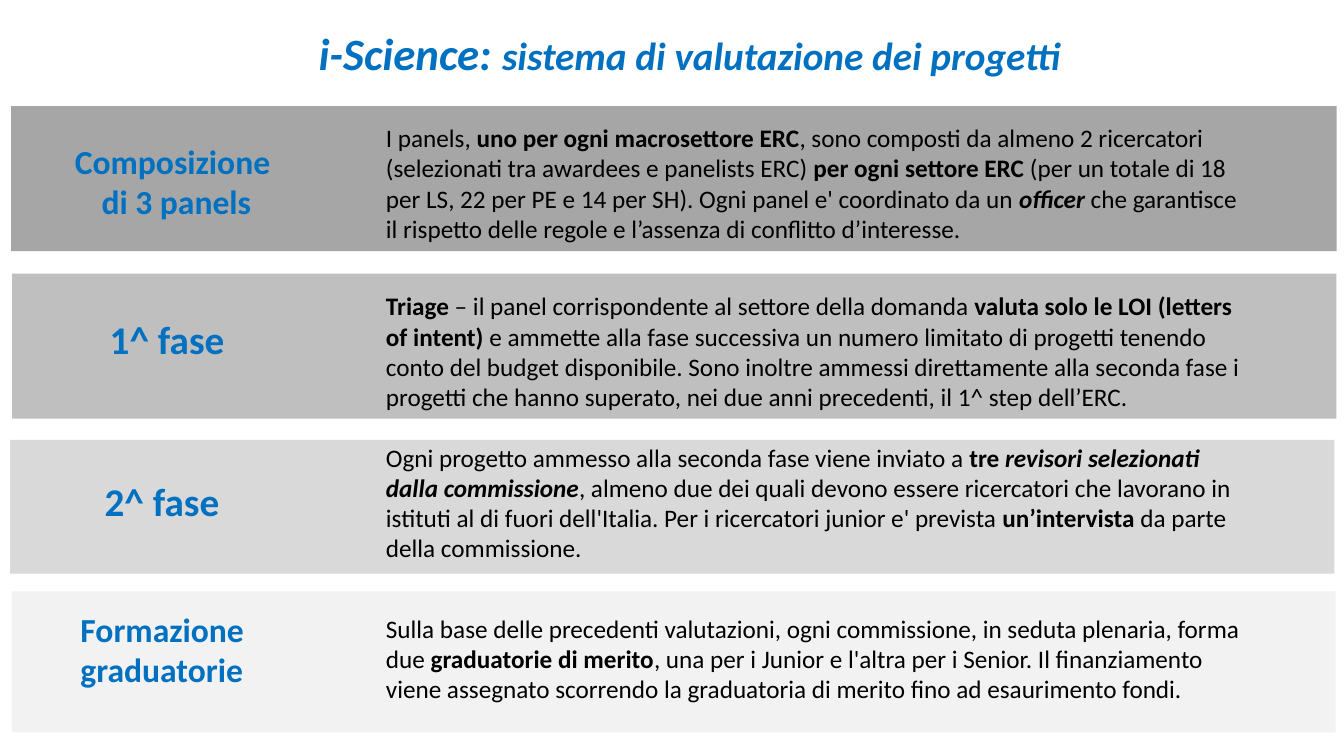
"""Build the slide on the i-Science project evaluation system."""
from pptx import Presentation
from pptx.dml.color import RGBColor
from pptx.enum.shapes import MSO_SHAPE
from pptx.enum.text import MSO_ANCHOR, MSO_AUTO_SIZE, PP_ALIGN
from pptx.util import Pt

RECTANGLE = MSO_SHAPE.RECTANGLE
TOP = MSO_ANCHOR.TOP
NO_AUTOFIT = MSO_AUTO_SIZE.NONE
LEFT, CENTER = PP_ALIGN.LEFT, PP_ALIGN.CENTER
TITLE_ONLY = 5
FONT = "Calibri"
COLORS = {
    "accent": "0070C0",
    "text": "000000",
    "panels": "A6A6A6",
    "phase_1": "BFBFBF",
    "phase_2": "D9D9D9",
    "ranking": "F2F2F2",
}


def write_text(frame, paragraphs, size=18, color="accent", align=LEFT, wrap=True, gaps=None):
    """Fill a frame with paragraphs of (text, style, optional size) runs."""
    frame.word_wrap = wrap
    frame.auto_size = NO_AUTOFIT
    frame.vertical_anchor = TOP
    for index, runs in enumerate(paragraphs):
        paragraph = frame.paragraphs[0] if index == 0 else frame.add_paragraph()
        paragraph.alignment = align
        paragraph.space_before = Pt(gaps[index] if gaps else 0)
        for text, style, *own_size in runs:
            run = paragraph.add_run()
            run.text = text
            run.font.name = FONT
            run.font.size = Pt(own_size[0] if own_size else size)
            run.font.bold = "b" in style
            run.font.italic = "i" in style
            run.font.color.rgb = RGBColor.from_string(COLORS[color])


presentation = Presentation()
presentation.slide_width = Pt(960)
presentation.slide_height = Pt(540)
slide = presentation.slides.add_slide(presentation.slide_layouts[TITLE_ONLY])

title = slide.shapes.title
title.left, title.top, title.width, title.height = Pt(220.3), Pt(14.4), Pt(557.3), Pt(46)
write_text(
    title.text_frame,
    [[("i-Science: ", "bi", 32), ("sistema di valutazione dei progetti", "bi", 28)]],
    wrap=False,
)

bands = [
    ("panels", 7.9, 75.8, 946.8, 103.7),
    ("phase_1", 8.6, 195.4, 946, 103.7),
    ("phase_2", 7.2, 314.2, 946, 95.5),
    ("ranking", 8.6, 422.4, 945.4, 100.8),
]
for color, left, top, width, height in bands:
    band = slide.shapes.add_shape(RECTANGLE, Pt(left), Pt(top), Pt(width), Pt(height))
    band.shadow.inherit = False
    band.fill.solid()
    band.fill.fore_color.rgb = RGBColor.from_string(COLORS[color])
    band.line.fill.background()

labels = [
    (["Composizione ", "di 3 panels"], 41, 97.2, 170, 65.5, 24, CENTER),
    (["1^ fase"], 71.3, 221.8, 97.2, 41, 28, LEFT),
    (["2^ fase"], 67.7, 337.7, 97.2, 41, 28, LEFT),
    (["Formazione", "graduatorie"], 50.4, 431.3, 176.4, 65.5, 24, LEFT),
]
for lines, left, top, width, height, size, align in labels:
    label = slide.shapes.add_textbox(Pt(left), Pt(top), Pt(width), Pt(height))
    write_text(
        label.text_frame,
        [[(line, "b")] for line in lines],
        size=size,
        align=align,
        wrap=len(lines) > 1,
    )

descriptions = [
    [
        ("I panels, ", ""),
        ("uno per ogni macrosettore ERC", "b"),
        (", sono composti da almeno 2 ricercatori (selezionati tra awardees e panelists ERC) ", ""),
        ("per ogni settore ERC ", "b"),
        ("(per un totale di 18 per LS, 22 per PE e 14 per SH). "
         "Ogni panel e' coordinato da un ", ""),
        ("officer", "bi"),
        (" che garantisce il rispetto delle regole e l’assenza di conflitto d’interesse.", ""),
    ],
    [
        ("Triage", "b"),
        (" – il panel corrispondente al settore della domanda ", ""),
        ("valuta solo le LOI (letters of intent) ", "b"),
        ("e ammette alla fase successiva un numero limitato di progetti tenendo conto del "
         "budget disponibile. Sono inoltre ammessi direttamente alla seconda fase i progetti "
         "che hanno superato, nei due anni precedenti, il 1^ step dell’ERC.", ""),
    ],
    [
        ("Ogni progetto ammesso alla seconda fase viene inviato a ", ""),
        ("tre ", "b"),
        ("revisori selezionati dalla commissione", "bi"),
        (", almeno due dei quali devono essere ricercatori che lavorano in istituti al di fuori "
         "dell'Italia. Per i ricercatori junior e' prevista ", ""),
        ("un’intervista", "b"),
        (" da parte della commissione.", ""),
    ],
    [
        ("Sulla base delle precedenti valutazioni, ogni commissione, in seduta plenaria, "
         "forma due ", ""),
        ("graduatorie di merito", "b"),
        (", una per i Junior e l'altra per i Senior. Il finanziamento viene assegnato scorrendo "
         "la graduatoria di merito fino ad esaurimento fondi.", ""),
    ],
]
description_box = slide.shapes.add_textbox(Pt(268.6), Pt(84), Pt(630.7), Pt(426))
write_text(
    description_box.text_frame,
    descriptions,
    color="text",
    gaps=[0, 33.7, 21.6, 35.9],
)

presentation.save("out.pptx")
